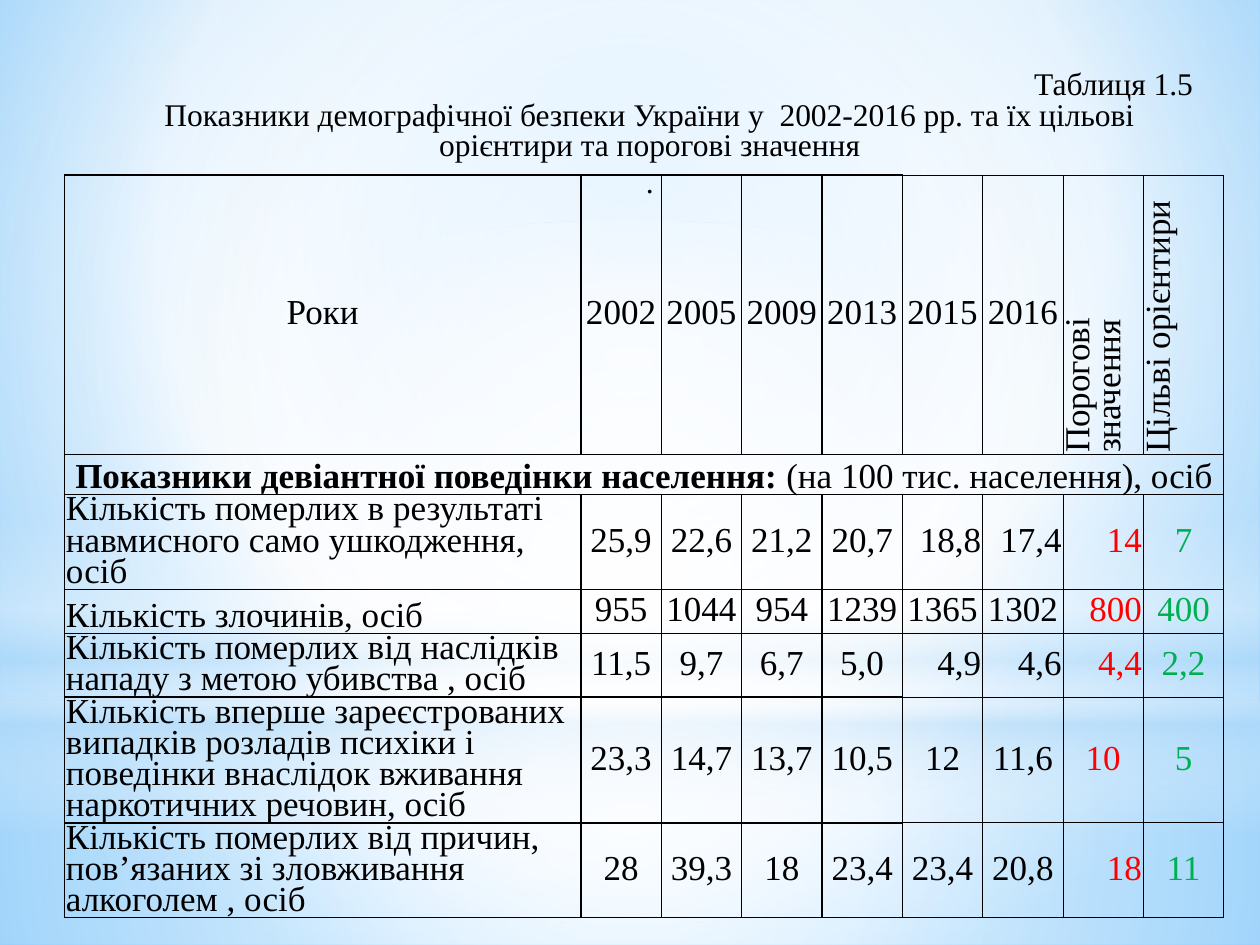
from lxml.etree import SubElement
from pptx import Presentation
from pptx.dml.color import RGBColor
from pptx.enum.shapes import MSO_SHAPE
from pptx.enum.text import MSO_ANCHOR, MSO_AUTO_SIZE, PP_ALIGN
from pptx.oxml.ns import qn
from pptx.util import Cm, Pt

RECT, OVAL = MSO_SHAPE.RECTANGLE, MSO_SHAPE.OVAL
MIDDLE, BOTTOM = MSO_ANCHOR.MIDDLE, MSO_ANCHOR.BOTTOM
ALIGN = {"l": PP_ALIGN.LEFT, "c": PP_ALIGN.CENTER, "r": PP_ALIGN.RIGHT}
HEX = {"black": "000000", "red": "FF0000", "green": "00B050",
       "white": "FFFFFF", "pale": "B4DCFA", "sky": "9ED5FF", "blue": "5BB9FF"}


def write(par, text, size=20, color="black", bold=False, align="l", lead=0.8):
    par.alignment = ALIGN[align]
    par.line_spacing = lead
    run = par.add_run()
    run.text = text
    run.font.name = "Times New Roman"
    run.font.size = Pt(size)
    run.font.bold = bold
    run.font.color.rgb = RGBColor.from_string(HEX[color])


def shade(item, stops, focus=None):
    """Fill with (position, colour, opacity) stops: round at focus, else top to bottom."""
    item.fill.gradient()
    owner = slide if item is slide.background else item
    grad = owner.element.find(".//" + qn("a:gradFill"))
    for child in list(grad):
        grad.remove(child)
    group = SubElement(grad, qn("a:gsLst"))
    for pos, color, alpha in stops:
        stop = SubElement(group, qn("a:gs"), pos=str(pos * 1000))
        tone = SubElement(stop, qn("a:srgbClr"), val=HEX[color])
        if alpha < 100:
            SubElement(tone, qn("a:alpha"), val=str(alpha * 1000))
    if focus:
        way = SubElement(grad, qn("a:path"), {"path": "circle"})
        SubElement(way, qn("a:fillToRect"),
                   {side: str(part * 1000) for side, part in zip("ltrb", focus)})
    else:
        SubElement(grad, qn("a:lin"), ang="5400000", scaled="0")


deck = Presentation()
deck.slide_width, deck.slide_height = Cm(25.4), Cm(19.05)
slide = deck.slides.add_slide(deck.slide_layouts[6])

# Background and soft light
shade(slide.background,
      [(0, "sky", 100), (60, "white", 100), (100, "blue", 100)], (20, 10, 20, 60))
MID = (50, 50, 50, 50)
glows = [
    (RECT, 14.17, 4.88, MID, [(0, "white", 91), (37, "white", 76), (100, "pale", 79)]),
    (RECT, 0, 14.17, MID, [(0, "white", 89), (48, "white", 62), (100, "pale", 79)]),
    (RECT, 10.46, 6.35, None, [(0, "white", 0), (29, "white", 30), (45, "pale", 40),
                               (55, "white", 26), (65, "pale", 60), (100, "white", 0)]),
    (OVAL, 4.45, 14.17, MID, [(0, "white", 100), (56, "white", 0)]),
]
for kind, top, height, focus, stops in glows:
    glow = slide.shapes.add_shape(kind, 0, Cm(top), deck.slide_width, Cm(height))
    glow.shadow.inherit = False
    glow.line.fill.background()
    shade(glow, stops, focus)

# Table: texts and one alignment letter per column
rows = [
    (5.61, "cccccccll", ["Роки", "2002", "2005", "2009", "2013", "2015", "2016",
                         "Порогові значення", "Цільві орієнтири"]),
    (0.81, "c", ["Показники девіантної поведінки населення: "]),
    (1.9, "lccccrrrc", ["Кількість померлих в результаті навмисного само ушкодження, осіб",
                        "25,9", "22,6", "21,2", "20,7", "18,8", "17,4", "14", "7"]),
    (0.89, "lccccccrc", ["Кількість злочинів, осіб",
                         "955", "1044", "954", "1239", "1365", "1302", "800", "400"]),
    (1.28, "lccccrrrc", ["Кількість померлих від наслідків нападу з метою убивства , осіб",
                         "11,5", "9,7", "6,7", "5,0", "4,9", "4,6", "4,4", "2,2"]),
    (2.53, "lcccccccc", ["Кількість вперше зареєстрованих випадків розладів психіки і "
                         "поведінки внаслідок вживання наркотичних речовин, осіб",
                         "23,3", "14,7", "13,7", "10,5", "12", "11,6", "10", "5"]),
    (1.89, "lccccccrc", ["Кількість померлих від причин, пов’язаних зі зловживання "
                         "алкоголем , осіб",
                         "28", "39,3", "18", "23,4", "23,4", "20,8", "18", "11"]),
]
widths = [10.41] + [1.62] * 8
HEAD, BAND = 0, 1
tints = {7: "red", 8: "green"}
frame = slide.shapes.add_table(len(rows), len(widths), Cm(1.3), Cm(3.53),
                               Cm(sum(widths)), Cm(sum(row[0] for row in rows)))
table = frame.table
table.first_row = table.horz_banding = False
for col, width in zip(table.columns, widths):
    col.width = Cm(width)
table.cell(BAND, 0).merge(table.cell(BAND, 8))

for r, (height, aligns, texts) in enumerate(rows):
    table.rows[r].height = Cm(height)
    for c in range(len(widths)):
        cell = table.cell(r, c)
        cell.margin_left = cell.margin_right = cell.margin_top = Cm(0.03)
        cell.margin_bottom = 0
        cell.vertical_anchor = BOTTOM if r == BAND or (c == 0 and r > BAND) else MIDDLE
        props = cell._tc.get_or_add_tcPr()
        for side in "LRTB":
            thin = c > 4 and r != BAND or side == "R" and (c == 4 or r == BAND)
            edge = SubElement(props, qn("a:ln" + side), w=str(Pt(0.5 if thin else 1)))
            ink = SubElement(edge, qn("a:solidFill"))
            SubElement(ink, qn("a:srgbClr"), val=HEX["black"])
        cell.fill.background()
        if r == HEAD and c in tints:
            props.set("vert", "vert270")
        if c < len(texts):
            write(cell.text_frame.paragraphs[0], texts[c], align=aligns[c], bold=r == BAND,
                  color="black" if r == HEAD else tints.get(c, "black"))
write(table.cell(BAND, 0).text_frame.paragraphs[0], "(на 100 тис. населення), осіб", align="c")

# Title above the table
title = slide.shapes.add_textbox(Cm(1.9), Cm(1.32), Cm(22.4), Cm(2.87)).text_frame
title.word_wrap = True
title.auto_size = MSO_AUTO_SIZE.SHAPE_TO_FIT_TEXT
write(title.paragraphs[0], "Таблиця 1.5", size=18, align="r")
write(title.add_paragraph(), "Показники демографічної безпеки України у  2002-2016 рр. "
      "та їх цільові орієнтири та порогові значення", size=18, align="c")
write(title.add_paragraph(), ".", size=18, align="c", lead=1.0)

deck.save("out.pptx")
